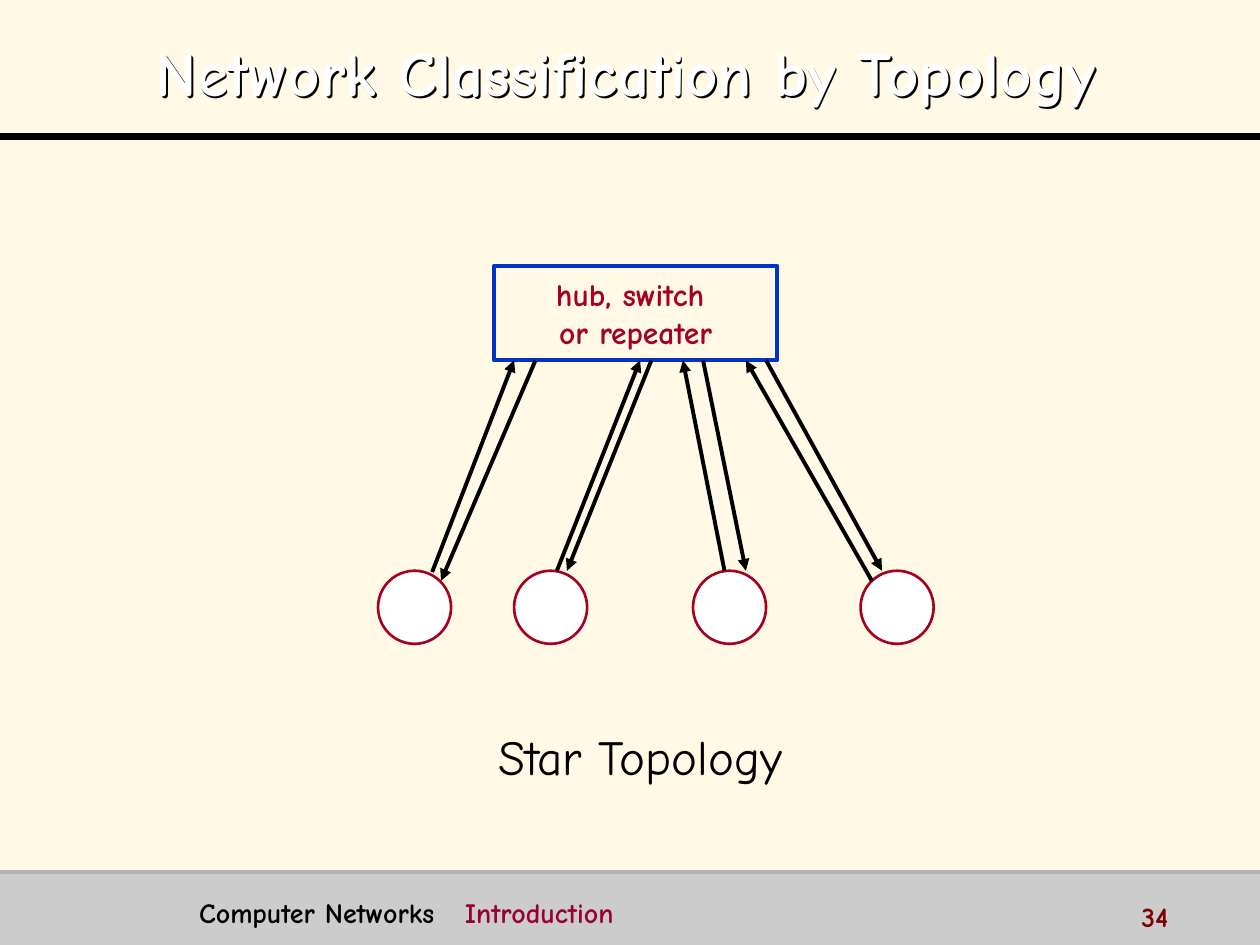
import pptx
import pptx.util
import pptx.dml.color
import pptx.enum.shapes
import pptx.enum.text
import pptx.oxml
import pptx.oxml.ns
from pptx.util import Inches

FONT = "Comic Neue"
COLORS = {
    "background": "FFF9E6", "footer": "CCCCCC", "footer_rule": "B2B2B2",
    "black": "000000", "white": "FFFFFF", "hub_edge": "0033CC",
    "crimson": "A50021", "chapter": "990033", "page": "800000",
}
TITLE = "Network Classification by Topology"
HUB_LINES = ["hub, switch ", "or repeater"]
CAPTION = "Star Topology"
COURSE, CHAPTER, PAGE = "Computer Networks", "Introduction", "34"

HUB = (3.92, 2.11, 2.25, 0.75)
HUB_BOTTOM = HUB[1] + HUB[3]
NODE_SIZE, NODE_TOP = 0.58, 4.53
FOOTER_TOP = 6.92
# Per node: left edge, then (x at hub, x at node, y at node) for each direction
NODES = [
    {"left": 3.00, "up": (4.08, 3.43, 4.54), "down": (4.25, 3.50, 4.61)},
    {"left": 4.08, "up": (5.08, 4.42, 4.53), "down": (5.17, 4.50, 4.53)},
    {"left": 5.50, "up": (5.42, 5.75, 4.53), "down": (5.58, 5.92, 4.53)},
    {"left": 6.83, "up": (5.92, 6.92, 4.61), "down": (6.08, 7.00, 4.53)},
]

ALIGN = pptx.enum.text.PP_ALIGN
ANCHOR = pptx.enum.text.MSO_ANCHOR
SHAPE = pptx.enum.shapes.MSO_SHAPE


def rgb(name):
    return pptx.dml.color.RGBColor.from_string(COLORS[name])


def add_xml(parent, xml):
    namespace = pptx.oxml.ns.nsdecls("a")
    parent.append(pptx.oxml.parse_xml(xml.replace(" ", f" {namespace} ", 1)))


def write(shape, paragraphs, size, bold=False, align=ALIGN.LEFT,
          anchor=ANCHOR.TOP, wrap=True, spacing=None, tab=None):
    """Fill a shape with paragraphs, each a list of (text, colour) runs."""
    frame = shape.text_frame
    frame.word_wrap = wrap
    frame.vertical_anchor = anchor
    for index, runs in enumerate(paragraphs):
        paragraph = frame.add_paragraph() if index else frame.paragraphs[0]
        paragraph.alignment = align
        if spacing:
            paragraph.line_spacing = spacing
        if tab:
            add_xml(paragraph._p.get_or_add_pPr(),
                    f'<a:tabLst ><a:tab pos="{Inches(tab)}" algn="l"/></a:tabLst>')
        for text, color in runs:
            run = paragraph.add_run()
            run.text = text
            run.font.name = FONT
            run.font.size = pptx.util.Pt(size)
            run.font.bold = bold
            run.font.color.rgb = rgb(color)
    return frame


def add_box(slide, kind, box, fill=None, edge=None, width=0):
    shape = slide.shapes.add_shape(kind, *map(Inches, box))
    shape.shadow.inherit = False
    if fill:
        shape.fill.solid()
        shape.fill.fore_color.rgb = rgb(fill)
    else:
        shape.fill.background()
    if edge:
        shape.line.color.rgb = rgb(edge)
        shape.line.width = pptx.util.Pt(width)
    else:
        shape.line.fill.background()
    return shape


def add_line(slide, start, end, color, width, arrow=False):
    line = slide.shapes.add_connector(
        pptx.enum.shapes.MSO_CONNECTOR.STRAIGHT, *map(Inches, start + end))
    line.line.color.rgb = rgb(color)
    line.line.width = pptx.util.Pt(width)
    if arrow:
        add_xml(line.line._get_or_add_ln(), '<a:tailEnd type="triangle"/>')
    add_xml(line._element.spPr, "<a:effectLst />")


def add_text(slide, box, paragraphs, size, **text_format):
    return write(slide.shapes.add_textbox(*map(Inches, box)),
                 paragraphs, size, **text_format)


def add_title(slide):
    """Place the title; without a fill, its shadow falls from the letters."""
    title = slide.shapes.title
    title.left, title.top, title.width, title.height = map(
        Inches, (0.52, 0, 8.89, 1.07))
    frame = write(title, [[(TITLE, "white")]], 36, bold=True,
                  align=ALIGN.CENTER, anchor=ANCHOR.MIDDLE, spacing=1.1)
    frame.auto_size = pptx.enum.text.MSO_AUTO_SIZE.NONE
    title.fill.background()
    title.line.fill.background()
    add_xml(title._element.spPr,
            f'<a:effectLst ><a:outerShdw dist="{Inches(0.02)}" dir="2700000" '
            'algn="ctr" rotWithShape="0">'
            f'<a:srgbClr val="{COLORS["black"]}"/></a:outerShdw></a:effectLst>')


def add_star(slide):
    hub = add_box(slide, SHAPE.RECTANGLE, HUB, edge="hub_edge", width=2.25)
    write(hub, [[(text, "crimson")] for text in HUB_LINES], 18, bold=True,
          align=ALIGN.CENTER, anchor=ANCHOR.MIDDLE, wrap=False)
    for node in NODES:
        add_box(slide, SHAPE.OVAL, (node["left"], NODE_TOP, NODE_SIZE, NODE_SIZE),
                fill="white", edge="crimson", width=1.5)
    for node in NODES:
        for direction in ("up", "down"):
            hub_x, node_x, node_y = node[direction]
            ends = [(node_x, node_y), (hub_x, HUB_BOTTOM)]
            if direction == "down":
                ends.reverse()
            add_line(slide, *ends, "black", 2.25, arrow=True)


def main():
    deck = pptx.Presentation()
    deck.slide_width, deck.slide_height = Inches(10), Inches(7.5)
    slide = deck.slides.add_slide(deck.slide_layouts[5])
    slide.background.fill.solid()
    slide.background.fill.fore_color.rgb = rgb("background")

    add_box(slide, SHAPE.RECTANGLE, (0, FOOTER_TOP, 10, 7.5 - FOOTER_TOP),
            fill="footer")
    add_line(slide, (0, 1.08), (10, 1.08), "black", 4)
    add_line(slide, (0, FOOTER_TOP), (10, FOOTER_TOP), "footer_rule", 2)
    add_title(slide)
    add_star(slide)
    add_text(slide, (2.72, 5.72, 4.72, 0.57), [[(CAPTION, "black")]], 28,
             align=ALIGN.CENTER)
    footer = add_text(slide, (1.41, 7.06, 7.28, 0.31),
                      [[(COURSE + "\t", "black"), (CHAPTER, "chapter")]], 16,
                      bold=True, tab=2.11)
    footer.margin_left = Inches(0.17)
    add_text(slide, (8.96, 7.09, 1, 0.25), [[(PAGE, "page")]], 16, bold=True)
    deck.save("out.pptx")


if __name__ == "__main__":
    main()
